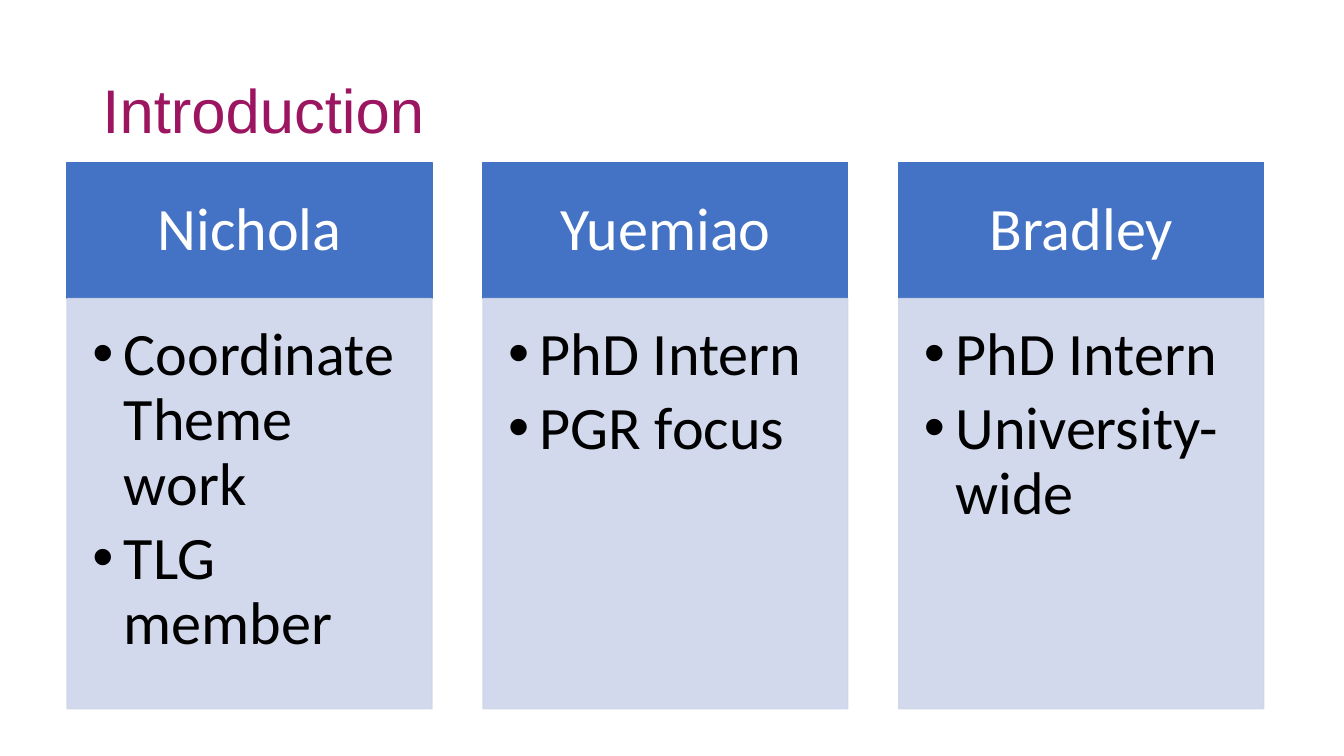
from dataclasses import dataclass

from lxml.etree import SubElement
from pptx import Presentation
from pptx.dml.color import RGBColor
from pptx.enum.shapes import MSO_SHAPE as Preset
from pptx.enum.text import MSO_ANCHOR as Anchor, MSO_AUTO_SIZE as AutoSize, PP_ALIGN as Align
from pptx.oxml.ns import qn
from pptx.shapes.autoshape import Shape
from pptx.slide import Slide
from pptx.util import Pt

PLUM, BLUE, PALE, WHITE, BLACK = "9C1560", "4472C4", "CFD5EA", "FFFFFF", "000000"
LEFT, TOP, WIDTH, PITCH = 48, 116, 260.6, 297
HEADER_HEIGHT, BODY_HEIGHT = 97.3, 293
TEXT_SIZE, BULLET_INDENT = 43, 22.5


@dataclass
class Person:
    name: str
    roles: list[str]


PEOPLE = [
    Person("Nichola", ["Coordinate Theme work", "TLG member"]),
    Person("Yuemiao", ["PhD Intern", "PGR focus"]),
    Person("Bradley", ["PhD Intern", "University-wide"]),
]


def style_font(font, size: float, face: str, color: str) -> None:
    font.size = Pt(size)
    font.name = face
    font.color.rgb = RGBColor.from_string(color)


def add_panel(slide: Slide, left: float, top: float, height: float, color: str,
              insets: tuple[float, float, float, float]) -> Shape:
    panel = slide.shapes.add_shape(Preset.RECTANGLE, Pt(left), Pt(top), Pt(WIDTH), Pt(height))
    panel.shadow.inherit = False
    panel.fill.solid()
    panel.line.width = Pt(1)
    for paint in (panel.fill.fore_color, panel.line.color):
        paint.rgb = RGBColor.from_string(color)
    frame = panel.text_frame
    frame.word_wrap = True
    frame.margin_left, frame.margin_top, frame.margin_right, frame.margin_bottom = map(Pt, insets)
    return panel


def make_translucent(panel: Shape, percent: int) -> None:
    for color in panel.element.spPr.iter(qn("a:srgbClr")):
        SubElement(color, qn("a:alpha"), val=str(percent * 1000))


def add_header(slide: Slide, left: float, name: str) -> None:
    header = add_panel(slide, left, TOP, HEADER_HEIGHT, BLUE, (24, 13.5, 24, 13.5))
    header.text_frame.vertical_anchor = Anchor.MIDDLE
    paragraph = header.text_frame.paragraphs[0]
    paragraph.text = name
    paragraph.alignment = Align.CENTER
    paragraph.line_spacing = 0.9
    style_font(paragraph.font, TEXT_SIZE, "Calibri", WHITE)


def add_roles(slide: Slide, left: float, roles: list[str]) -> None:
    body = add_panel(slide, left, TOP + HEADER_HEIGHT, BODY_HEIGHT, PALE, (18, 18, 24, 27))
    make_translucent(body, 90)
    frame = body.text_frame
    frame.vertical_anchor = Anchor.TOP
    for index, role in enumerate(roles):
        paragraph = frame.add_paragraph() if index else frame.paragraphs[0]
        paragraph.text = role
        properties = paragraph._p.get_or_add_pPr()
        properties.set("marL", str(Pt(BULLET_INDENT)))
        properties.set("indent", str(-Pt(BULLET_INDENT)))
        SubElement(properties, qn("a:buFont"), typeface="Arial")
        SubElement(properties, qn("a:buChar"), char="•")
        paragraph.level = 1
        paragraph.alignment = Align.LEFT
        paragraph.line_spacing = 0.9
        paragraph.space_after = Pt(6.5)
        style_font(paragraph.font, TEXT_SIZE, "Calibri", BLACK)


def add_title(slide: Slide, text: str) -> None:
    title = slide.shapes.title
    title.left, title.top, title.width, title.height = Pt(66), Pt(28.75), Pt(828), Pt(104.4)
    frame = title.text_frame
    frame.auto_size = AutoSize.NONE
    frame.vertical_anchor = Anchor.MIDDLE
    paragraph = frame.paragraphs[0]
    paragraph.text = text
    paragraph.alignment = Align.LEFT
    paragraph.line_spacing = 0.9
    style_font(paragraph.font, 44, "Arial", PLUM)


def main() -> None:
    deck = Presentation()
    deck.slide_width, deck.slide_height = Pt(960), Pt(540)
    slide = deck.slides.add_slide(deck.slide_layouts.get_by_name("Title Only"))

    # Title
    add_title(slide, "Introduction")

    # One column per person
    for column, person in enumerate(PEOPLE):
        left = LEFT + column * PITCH
        add_header(slide, left, person.name)
        add_roles(slide, left, person.roles)

    deck.save("out.pptx")


if __name__ == "__main__":
    main()
